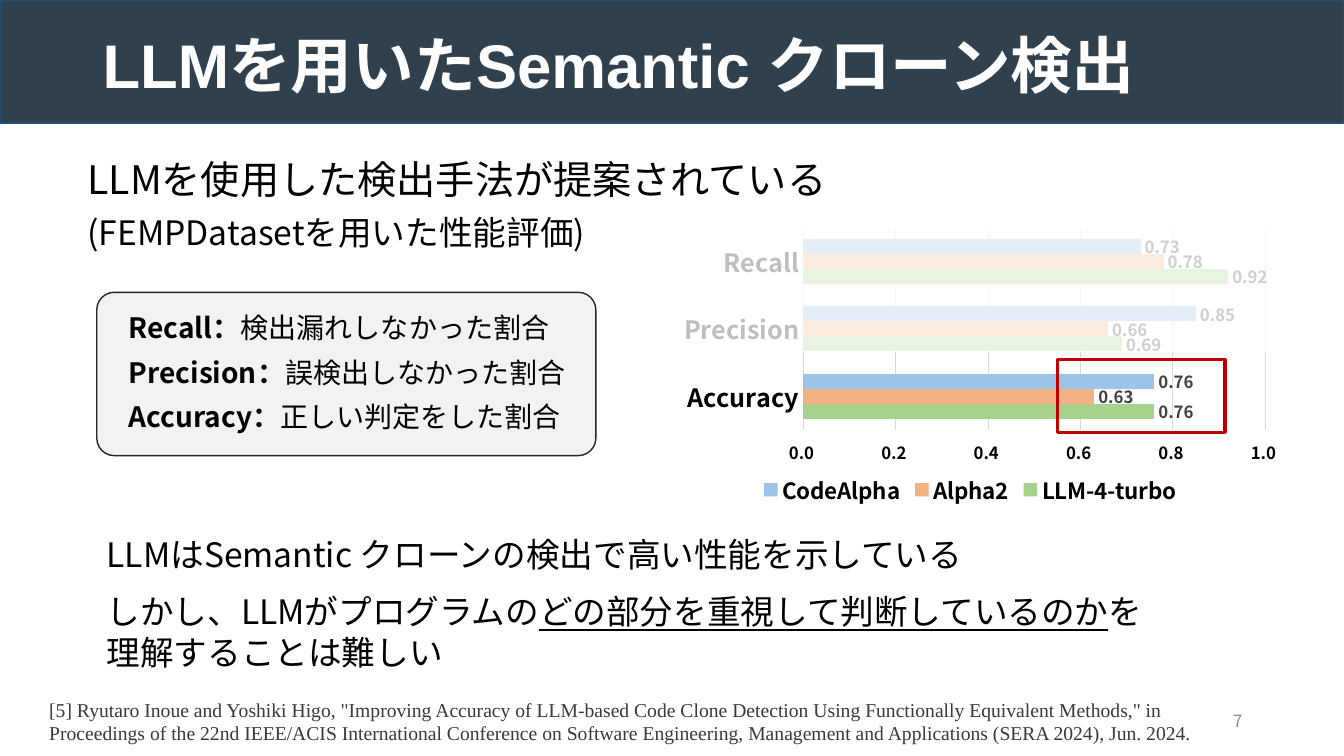
from lxml import etree
from pptx import Presentation
from pptx.chart.data import CategoryChartData
from pptx.dml.color import RGBColor
from pptx.enum.chart import XL_CHART_TYPE, XL_LABEL_POSITION, XL_LEGEND_POSITION, XL_TICK_MARK
from pptx.enum.shapes import MSO_SHAPE
from pptx.enum.text import MSO_ANCHOR, PP_ALIGN
from pptx.oxml import parse_xml
from pptx.oxml.ns import nsdecls, qn
from pptx.util import Inches, Pt

BAR = XL_CHART_TYPE.BAR_CLUSTERED
OUTSIDE_END = XL_LABEL_POSITION.OUTSIDE_END
LEGEND_BOTTOM = XL_LEGEND_POSITION.BOTTOM
TICK_NONE, TICK_OUT = XL_TICK_MARK.NONE, XL_TICK_MARK.OUTSIDE
RECTANGLE, ROUNDED = MSO_SHAPE.RECTANGLE, MSO_SHAPE.ROUNDED_RECTANGLE
TOP, MIDDLE, BOTTOM = MSO_ANCHOR.TOP, MSO_ANCHOR.MIDDLE, MSO_ANCHOR.BOTTOM
LEFT, RIGHT = PP_ALIGN.LEFT, PP_ALIGN.RIGHT

BLACK = RGBColor(0x00, 0x00, 0x00)
WHITE = RGBColor(0xFF, 0xFF, 0xFF)
NAVY = RGBColor(0x31, 0x40, 0x4D)
BLUE = RGBColor(0x1F, 0x4E, 0x79)
PALE = RGBColor(0xF2, 0xF2, 0xF2)
CHARCOAL = RGBColor(0x26, 0x26, 0x26)
LABEL_GRAY = RGBColor(0x40, 0x40, 0x40)
GRID_GRAY = RGBColor(0xD9, 0xD9, 0xD9)
NUMBER_GRAY = RGBColor(0x8C, 0x8C, 0x8C)
SOURCE_GRAY = RGBColor(0x3B, 0x38, 0x38)
RED = RGBColor(0xC0, 0x00, 0x00)
GREEN_BAR = RGBColor(0xA9, 0xD1, 0x8E)
ORANGE_BAR = RGBColor(0xF4, 0xB1, 0x83)
BLUE_BAR = RGBColor(0x9D, 0xC3, 0xE6)
SANS = "Noto Sans CJK JP"

presentation = Presentation()
presentation.slide_width, presentation.slide_height = Inches(13.33), Inches(7.5)
slide = presentation.slides.add_slide(presentation.slide_layouts[6])


def add_panel(kind, box, fill, line, width):
    shape = slide.shapes.add_shape(kind, *map(Inches, box))
    shape.shadow.inherit = False
    if fill is None:
        shape.fill.background()
    else:
        shape.fill.solid()
        shape.fill.fore_color.rgb = fill
    if line is None:
        shape.line.fill.background()
    else:
        shape.line.color.rgb = line
        shape.line.width = Pt(width)
    return shape


def add_text(box, paragraphs, color=BLACK, font=SANS, anchor=TOP, align=LEFT, spacing=1.0):
    frame = slide.shapes.add_textbox(*map(Inches, box)).text_frame
    frame.word_wrap = True
    frame.vertical_anchor = anchor
    for index, (size, before, runs) in enumerate(paragraphs):
        paragraph = frame.paragraphs[0] if index == 0 else frame.add_paragraph()
        layout = {"alignment": align, "line_spacing": spacing, "space_before": Pt(before)}
        for name, value in layout.items():
            setattr(paragraph, name, value)
        for text, style in runs:
            if text == "\n":
                paragraph.add_line_break()
                continue
            run = paragraph.add_run()
            run.text = text
            run.font.color.rgb = color
            for name, value in {"name": font, "size": Pt(size), **style}.items():
                setattr(run.font, name, value)
            etree.SubElement(run.font._element, qn("a:ea"), typeface=font)


definition_panel = add_panel(ROUNDED, (0.96, 2.9, 4.95, 1.62), PALE, CHARCOAL, 1)
definition_panel.adjustments[0] = 0.107
add_panel(RECTANGLE, (0, 0, 13.33, 1.22), NAVY, BLUE, 1)

add_text((0.92, 0.18, 11.5, 0.88),
         [(44, 0, [("LLMを用いたSemantic クローン検出", {"bold": True})])],
         color=WHITE, font="Arial", anchor=BOTTOM, spacing=0.9)
add_text((0.77, 1.54, 8.64, 1.1),
         [(28, 10, [("LLMを使用した検出手法が提案されている", {})]),
          (24, 10, [("(FEMPDatasetを用いた性能評価)", {})])], spacing=0.9)
add_text((9.42, 6.95, 3, 0.4), [(12, 0, [("7", {})])],
         color=NUMBER_GRAY, anchor=MIDDLE, align=RIGHT)
add_text((0.39, 6.87, 11.6, 0.57),
         [(14, 0, [('[5] Ryutaro Inoue and Yoshiki Higo, "Improving Accuracy of LLM-based Code Clone '
                    'Detection Using Functionally Equivalent Methods," in Proceedings of the 22nd '
                    'IEEE/ACIS International Conference on Software Engineering, Management and '
                    'Applications (SERA 2024), Jun. 2024.', {})])],
         color=SOURCE_GRAY, font="Times New Roman")

models = [("LLM-4-turbo", (0.76, 0.69, 0.92), GREEN_BAR),
          ("Alpha2", (0.63, 0.66, 0.78), ORANGE_BAR),
          ("CodeAlpha", (0.76, 0.85, 0.73), BLUE_BAR)]
scores = CategoryChartData()
scores.categories = ["Accuracy", "Precision", "Recall"]
for name, values, color in models:
    scores.add_series(name, values)
chart = slide.shapes.add_chart(BAR, *map(Inches, (6.39, 2.14, 6.47, 2.92)), scores).chart
chart.has_title = False
chart.has_legend = True
chart.legend.position = LEGEND_BOTTOM
chart.legend.include_in_layout = False
plot = chart.plots[0]
plot.gap_width = 150
plot.overlap = 0
plot.vary_by_categories = False
category_axis, value_axis = chart.category_axis, chart.value_axis
category_axis.major_tick_mark = TICK_NONE
category_axis.format.line.color.rgb = GRID_GRAY
category_axis.format.line.width = Pt(0.75)
axis_format = {"minimum_scale": 0, "maximum_scale": 1, "major_unit": 0.2,
               "major_tick_mark": TICK_OUT, "has_major_gridlines": True}
for name, value in axis_format.items():
    setattr(value_axis, name, value)
value_axis.format.line.fill.background()
value_axis.major_gridlines.format.line.color.rgb = GRID_GRAY
value_axis.major_gridlines.format.line.width = Pt(0.75)
value_axis.tick_labels.number_format = "0.0_ "
value_axis.tick_labels.number_format_is_linked = False

chart_fonts = [(chart.font, 10, BLACK, False), (category_axis.tick_labels.font, 18, BLACK, True),
               (value_axis.tick_labels.font, 12, BLACK, True), (chart.legend.font, 16, BLACK, True)]
for series, (name, values, color) in zip(plot.series, models):
    series.format.fill.solid()
    series.format.fill.fore_color.rgb = color
    labels = series.data_labels
    label_format = {"show_value": True, "position": OUTSIDE_END,
                    "number_format": "0.00_ ", "number_format_is_linked": False}
    for key, value in label_format.items():
        setattr(labels, key, value)
    chart_fonts.append((labels.font, 12, LABEL_GRAY, True))
for font, size, color, bold in chart_fonts:
    for name, value in {"name": SANS, "size": Pt(size), "bold": bold}.items():
        setattr(font, name, value)
    font.color.rgb = color

plot_area = chart._chartSpace.chart.plotArea
for old_layout in plot_area.findall(qn("c:layout")):
    plot_area.remove(old_layout)
plot_area.insert(0, parse_xml(
    f'<c:layout {nsdecls("c")}><c:manualLayout><c:layoutTarget val="inner"/>'
    '<c:xMode val="edge"/><c:yMode val="edge"/><c:x val="0.244"/><c:y val="0.041"/>'
    '<c:w val="0.708"/><c:h val="0.687"/></c:manualLayout></c:layout>'))

definitions = [("Recall：", "検出漏れしなかった割合"), ("Precision：", "誤検出しなかった割合"),
               ("Accuracy：", "正しい判定をした割合")]
add_text((1.18, 2.9, 4.56, 1.62),
         [(20, 10, [(term, {"bold": True}), (meaning, {})]) for term, meaning in definitions],
         anchor=MIDDLE, spacing=0.9)
add_text((0.96, 5.25, 11.5, 1.5),
         [(24, 0, [("LLMはSemantic クローンの検出で高い性能を示している", {})]),
          (24, 12, [("しかし、LLMがプログラムの", {}),
                    ("どの部分を重視して判断しているのか", {"underline": True}),
                    ("を", {}), ("\n", {}), ("理解することは難しい", {})])])

add_panel(RECTANGLE, (10.49, 3.57, 1.66, 0.72), None, RED, 2.25)
veil = add_panel(ROUNDED, (6.41, 2.14, 6.76, 1.35), WHITE, None, 0)
veil.adjustments[0] = 0
veil_color = veil.fill._xPr.find(qn("a:solidFill"))[0]
etree.SubElement(veil_color, qn("a:alpha"), val="75000")

presentation.save("out.pptx")
